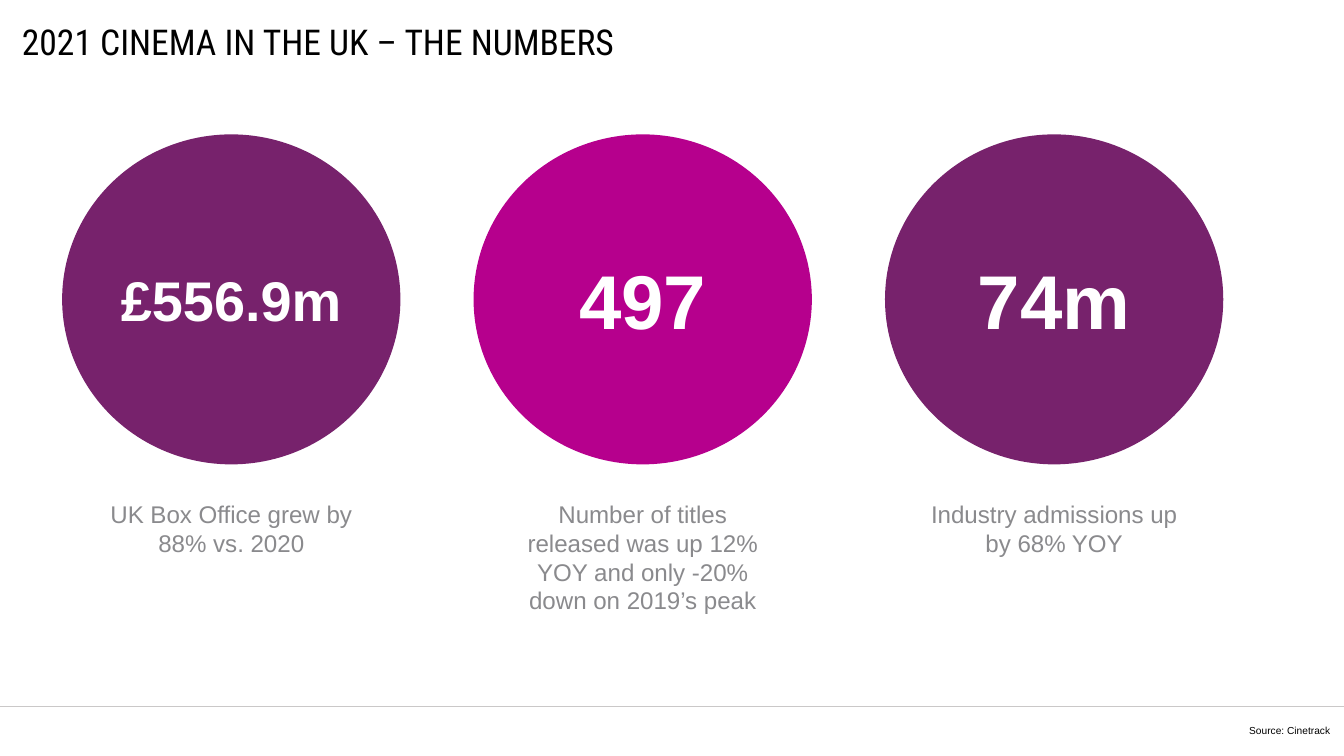
"""Build the slide of 2021 UK cinema figures."""
from lxml.etree import SubElement
from pptx import Presentation
from pptx.dml.color import RGBColor
from pptx.enum.shapes import MSO_CONNECTOR, MSO_SHAPE
from pptx.enum.text import MSO_ANCHOR, PP_ALIGN
from pptx.oxml.ns import qn
from pptx.util import Inches, Pt


def color(value):
    return RGBColor.from_string(value)


def write_text(shape, text, size, ink, align, font="Arial", bold=False,
               anchor=MSO_ANCHOR.MIDDLE, insets=(0, 0)):
    frame = shape.text_frame
    frame.word_wrap = True
    frame.vertical_anchor = anchor
    frame.margin_left = frame.margin_right = Inches(insets[0])
    frame.margin_top = frame.margin_bottom = Inches(insets[1])
    paragraph = frame.paragraphs[0]
    paragraph.alignment = align
    run = paragraph.add_run()
    run.text = text
    run.font.name = font
    run.font.size = Pt(size)
    run.font.bold = bold
    run.font.color.rgb = color(ink)


presentation = Presentation()
presentation.slide_width = Inches(14.7)
presentation.slide_height = Inches(8.27)
slide = presentation.slides.add_slide(presentation.slide_layouts[6])

footer_top = Inches(7.73)
footer_line = slide.shapes.add_connector(
    MSO_CONNECTOR.STRAIGHT, 0, footer_top, presentation.slide_width, footer_top)
footer_line.line.color.rgb = color("CAC8C8")
footer_line.line.width = Pt(0.5)
SubElement(footer_line._element.spPr, qn("a:effectLst"))

source_note = slide.shapes.add_textbox(
    Inches(11.14), Inches(7.93), Inches(3.41), Inches(0.13))
write_text(source_note, "Source: Cinetrack", 8, "000000", PP_ALIGN.RIGHT)

title = slide.shapes.add_textbox(
    Inches(0.24), Inches(0.3), Inches(13.58), Inches(0.31))
write_text(title, "2021 CINEMA IN THE UK – THE NUMBERS", 28, "000000",
           PP_ALIGN.LEFT, font="Roboto Condensed")

figures = [
    ("£556.9m", 44, "77226C", 0.74, "UK Box Office grew by 88% vs. 2020"),
    ("497", 60, "B6008D", 1.38,
     "Number of titles released was up 12% YOY and only -20% down on 2019’s peak"),
    ("74m", 60, "77226C", 0.74, "Industry admissions up by 68% YOY"),
]
column_pitch = 4.5

for column, (figure, size, fill, caption_height, caption) in enumerate(figures):
    left = column * column_pitch
    circle = slide.shapes.add_shape(
        MSO_SHAPE.OVAL, Inches(0.68 + left), Inches(1.47), Inches(3.7), Inches(3.61))
    circle.shadow.inherit = False
    circle.fill.solid()
    circle.fill.fore_color.rgb = color(fill)
    circle.line.fill.background()
    write_text(circle, figure, size, "FFFFFF", PP_ALIGN.CENTER, bold=True)

    caption_box = slide.shapes.add_textbox(
        Inches(1 + left), Inches(5.41), Inches(3.06), Inches(caption_height))
    write_text(caption_box, caption, 19, "8A8A8D", PP_ALIGN.CENTER,
               anchor=MSO_ANCHOR.TOP, insets=(0.1, 0.05))

presentation.save("out.pptx")
